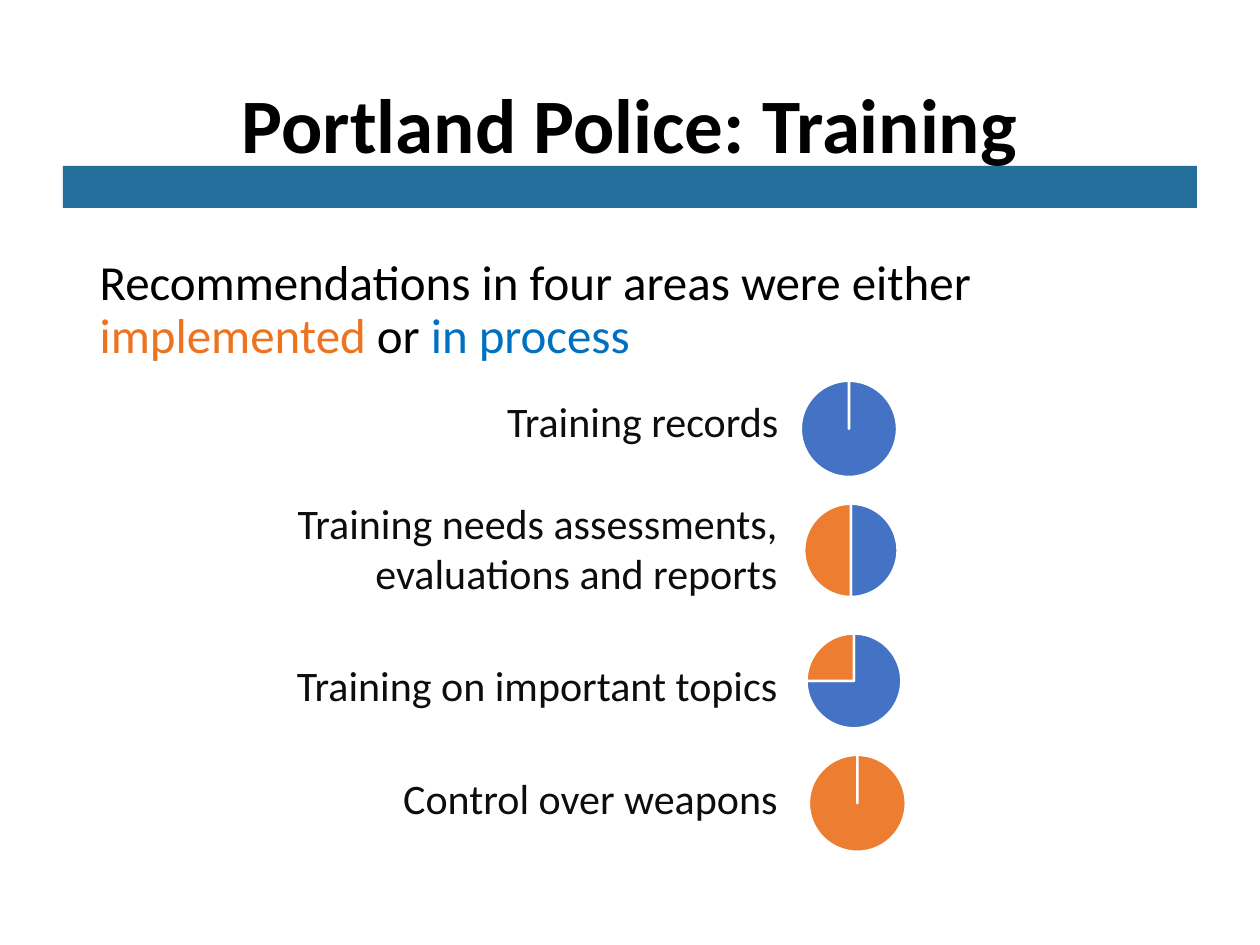
from lxml import etree
from pptx import Presentation
from pptx.chart.data import CategoryChartData
from pptx.dml.color import RGBColor
from pptx.enum.chart import XL_CHART_TYPE as CHART
from pptx.enum.shapes import MSO_SHAPE as SHAPE
from pptx.enum.text import MSO_ANCHOR as ANCHOR, MSO_AUTO_SIZE as AUTO, PP_ALIGN as ALIGN
from pptx.oxml import parse_xml
from pptx.oxml.ns import nsdecls, qn
from pptx.util import Emu, Pt

PX = 914400 // 126
FONT = "Calibri"
BLACK, LABEL = "000000", "0D0D0D"
BAR = "246E9C"
SLICES = ["4472C4", "ED7D31"]
PIE_SHARE = 0.72  # pie diameter relative to the shorter side of its frame

TITLE = "Portland Police: Training"
INTRO = [
    ("Recommendations in four areas were either ", BLACK),
    ("implemented", "EC7320"),
    (" or ", BLACK),
    ("in process", "0070C0"),
]
# label, label box, slice values, chart frame (boxes: left, top, width, height in px)
AREAS = [
    ("Training records", (426, 389, 365, 63), (100, 0), (782, 362, 134, 134)),
    ("Training needs assessments, evaluations and reports", (91, 491, 699, 115),
     (50, 50), (786, 481, 130, 139)),
    ("Training on important topics", (91, 653, 699, 63), (75, 25), (788, 610, 132, 142)),
    ("Control over weapons", (91, 766, 699, 63), (0, 100), (788, 736, 139, 135)),
]


def px(*lengths):
    return [Emu(n * PX) for n in lengths]


def color(hex_code):
    return RGBColor.from_string(hex_code)


def style(font, size, hex_code, bold=False):
    font.name, font.size, font.bold = FONT, Pt(size), bold
    font.color.rgb = color(hex_code)


def place(sp, *box):
    sp.left, sp.top, sp.width, sp.height = px(*box)


def add_title(slide):
    sp = slide.shapes.title
    place(sp, 87, 50, 1086, 183)
    tf = sp.text_frame
    tf.text = TITLE
    tf.auto_size, tf.vertical_anchor = AUTO.NONE, ANCHOR.MIDDLE
    tf.margin_bottom = px(33)[0]  # lifts the title above the bar
    p = tf.paragraphs[0]
    p.alignment, p.line_spacing = ALIGN.CENTER, 0.9
    style(p.runs[0].font, 44, BLACK, bold=True)


def add_intro(slide):
    sp = slide.placeholders[1]
    place(sp, 87, 252, 1086, 600)
    sp.text_frame.auto_size = AUTO.NONE
    p = sp.text_frame.paragraphs[0]
    p.line_spacing, p.space_before = 0.9, Pt(10)
    # No bullet and no hanging indent
    pPr = p._p.get_or_add_pPr()
    pPr.set("marL", "0")
    pPr.set("indent", "0")
    etree.SubElement(pPr, qn("a:buNone"))
    for text, hex_code in INTRO:
        r = p.add_run()
        r.text = text
        style(r.font, 28, hex_code)


def add_bar(slide):
    sp = slide.shapes.add_shape(SHAPE.RECTANGLE, *px(63, 166, 1134, 42))
    sp.shadow.inherit = False
    sp.fill.solid()
    sp.fill.fore_color.rgb = color(BAR)
    sp.line.fill.background()


def add_pie(slide, values, box):
    data = CategoryChartData()
    data.categories = ["1", "2"]
    data.add_series("Series 1", values)
    chart = slide.shapes.add_chart(CHART.PIE, *px(*box), data).chart
    chart.has_legend = chart.has_title = False
    style(chart.font, 10, BLACK)
    plot = chart.plots[0]
    plot.vary_by_categories = True
    for i, hex_code in enumerate(SLICES):
        fmt = plot.series[0].points[i].format
        fmt.fill.solid()
        fmt.fill.fore_color.rgb = color(hex_code)
        fmt.line.color.rgb = color("FFFFFF")
        fmt.line.width = Pt(1.5)

    # White chart area, and a centred square plot area
    space = chart._chartSpace
    space.find(qn("c:chart")).addnext(parse_xml(
        f'<c:spPr {nsdecls("c", "a")}><a:solidFill><a:srgbClr val="FFFFFF"/></a:solidFill>'
        '<a:ln><a:noFill/></a:ln></c:spPr>'))
    width, height = box[2:]
    side = PIE_SHARE * min(width, height)
    w, h = side / width, side / height
    area = space.find(".//" + qn("c:plotArea"))
    for old in area.findall(qn("c:layout")):
        area.remove(old)
    layout = [("layoutTarget", "inner"), ("xMode", "edge"), ("yMode", "edge"),
              ("x", (1 - w) / 2), ("y", (1 - h) / 2), ("w", w), ("h", h)]
    parts = "".join(f'<c:{tag} val="{value}"/>' for tag, value in layout)
    area.insert(0, parse_xml(
        f'<c:layout {nsdecls("c")}><c:manualLayout>{parts}</c:manualLayout></c:layout>'))


def add_label(slide, text, box):
    tf = slide.shapes.add_textbox(*px(*box)).text_frame
    tf.word_wrap, tf.auto_size = True, AUTO.SHAPE_TO_FIT_TEXT
    tf.text = text
    p = tf.paragraphs[0]
    p.alignment = ALIGN.RIGHT
    style(p.runs[0].font, 24, LABEL)


def main():
    prs = Presentation()
    prs.slide_width, prs.slide_height = px(1260, 945)
    slide = prs.slides.add_slide(prs.slide_layouts[1])
    add_intro(slide)
    add_title(slide)
    add_bar(slide)
    for _, _, values, frame in AREAS:
        add_pie(slide, values, frame)
    for text, box, _, _ in AREAS:
        add_label(slide, text, box)
    prs.save("out.pptx")


if __name__ == "__main__":
    main()
